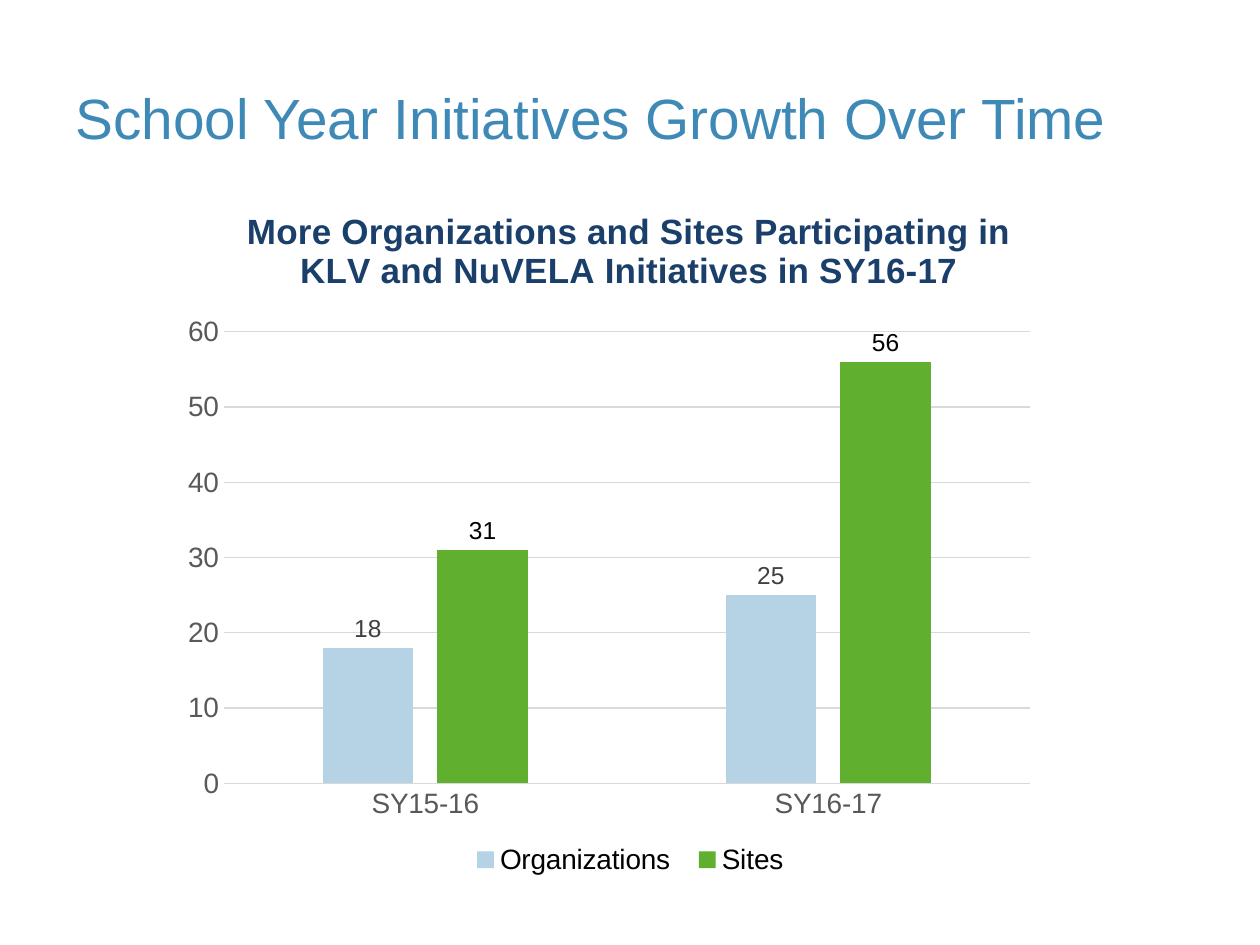
import pptx
import pptx.chart.data
import pptx.dml.color
import pptx.enum.chart
import pptx.enum.text
import pptx.oxml
import pptx.oxml.ns
import pptx.util

COLORS = {
    "heading": "3F89B7",
    "caption": "1B3F6B",
    "ticks": "595959",
    "grid": "D9D9D9",
    "organizations": "B5D3E5",
    "sites": "60AF2F",
    "soft": "404040",
    "ink": "000000",
}


def style_font(font, size, color, bold=False):
    values = {"name": "Arial", "size": pptx.util.Pt(size), "bold": bold}
    for key, value in values.items():
        setattr(font, key, value)
    font.color.rgb = pptx.dml.color.RGBColor.from_string(COLORS[color])


def place_part(part, index, target, **shares):
    for old in part.findall(pptx.oxml.ns.qn("c:layout")):
        part.remove(old)
    inner = f'<c:layoutTarget val="{target}"/>' if target else ""
    inner += "".join(f'<c:{key}Mode val="edge"/>' for key in "xy")
    inner += "".join(f'<c:{key} val="{value}"/>' for key, value in shares.items())
    part.insert(index, pptx.oxml.parse_xml(
        f'<c:layout {pptx.oxml.ns.nsdecls("c")}>'
        f"<c:manualLayout>{inner}</c:manualLayout></c:layout>"))


deck = pptx.Presentation()
deck.slide_width = pptx.util.Inches(10)
deck.slide_height = pptx.util.Inches(7.5)
W, H = deck.slide_width, deck.slide_height
slide = deck.slides.add_slide(deck.slide_layouts[5])

heading = slide.shapes.title
heading_box = {
    "left": int(W * 0.05),
    "top": int(H * 0.04),
    "width": int(W * 0.9),
    "height": int(H / 6),
}
for key, value in heading_box.items():
    setattr(heading, key, value)
heading.text_frame.text = "School Year Initiatives Growth Over Time"
heading.text_frame.vertical_anchor = pptx.enum.text.MSO_ANCHOR.MIDDLE
heading_line = heading.text_frame.paragraphs[0]
heading_line.alignment = pptx.enum.text.PP_ALIGN.LEFT
style_font(heading_line.runs[0].font, 32.4, "heading")

growth = pptx.chart.data.CategoryChartData(number_format="#,##0")
growth.categories = ["SY15-16", "SY16-17"]
growth.add_series("Organizations", [18, 25])
growth.add_series("Sites", [31, 56])
growth_chart = slide.shapes.add_chart(
    pptx.enum.chart.XL_CHART_TYPE.COLUMN_CLUSTERED,
    int(W * 0.05), int(H * 0.2067), int(W * 0.783), int(H * 0.748), growth).chart
style_font(growth_chart.font, 10, "ink")

caption = growth_chart.chart_title
caption.text_frame.text = "More Organizations and Sites Participating in KLV and NuVELA Initiatives in SY16-17"
style_font(caption.text_frame.paragraphs[0].runs[0].font, 20, "caption", True)
caption.include_in_layout = False

growth_chart.has_legend = True
legend = growth_chart.legend
legend.position = pptx.enum.chart.XL_LEGEND_POSITION.BOTTOM
legend.include_in_layout = False
style_font(legend.font, 16, "ink")

bars = growth_chart.plots[0]
for key, value in {"gap_width": 219, "overlap": -27, "vary_by_categories": False}.items():
    setattr(bars, key, value)

for series, fill, label_color in zip(bars.series, ("organizations", "sites"), ("soft", "ink")):
    series.format.fill.solid()
    series.format.fill.fore_color.rgb = pptx.dml.color.RGBColor.from_string(COLORS[fill])
    series.invert_if_negative = False
    label_format = {
        "show_value": True,
        "number_format": "#,##0",
        "number_format_is_linked": False,
        "position": pptx.enum.chart.XL_LABEL_POSITION.OUTSIDE_END,
    }
    for key, value in label_format.items():
        setattr(series.data_labels, key, value)
    style_font(series.data_labels.font, 14, label_color)

years, counts = growth_chart.category_axis, growth_chart.value_axis
for axis in (years, counts):
    axis.major_tick_mark = pptx.enum.chart.XL_TICK_MARK.NONE
    axis.minor_tick_mark = pptx.enum.chart.XL_TICK_MARK.NONE
    style_font(axis.tick_labels.font, 16, "ticks")
count_scale = {
    "minimum_scale": 0,
    "maximum_scale": 60,
    "major_unit": 10,
    "has_major_gridlines": True,
}
for key, value in count_scale.items():
    setattr(counts, key, value)
counts.format.line.fill.background()
for line in (years.format.line, counts.major_gridlines.format.line):
    line.width = pptx.util.Pt(0.75)
    line.color.rgb = pptx.dml.color.RGBColor.from_string(COLORS["grid"])

plot_area = growth_chart.element.find(".//" + pptx.oxml.ns.qn("c:plotArea"))
place_part(plot_area, 0, "inner", x=0.163, y=0.193, w=0.817, h=0.639)
place_part(caption._element, 1, "", x=0.18, y=0.01)
place_part(legend._element, 1, "", x=0.4, y=0.905, w=0.35, h=0.07)

deck.save("out.pptx")
